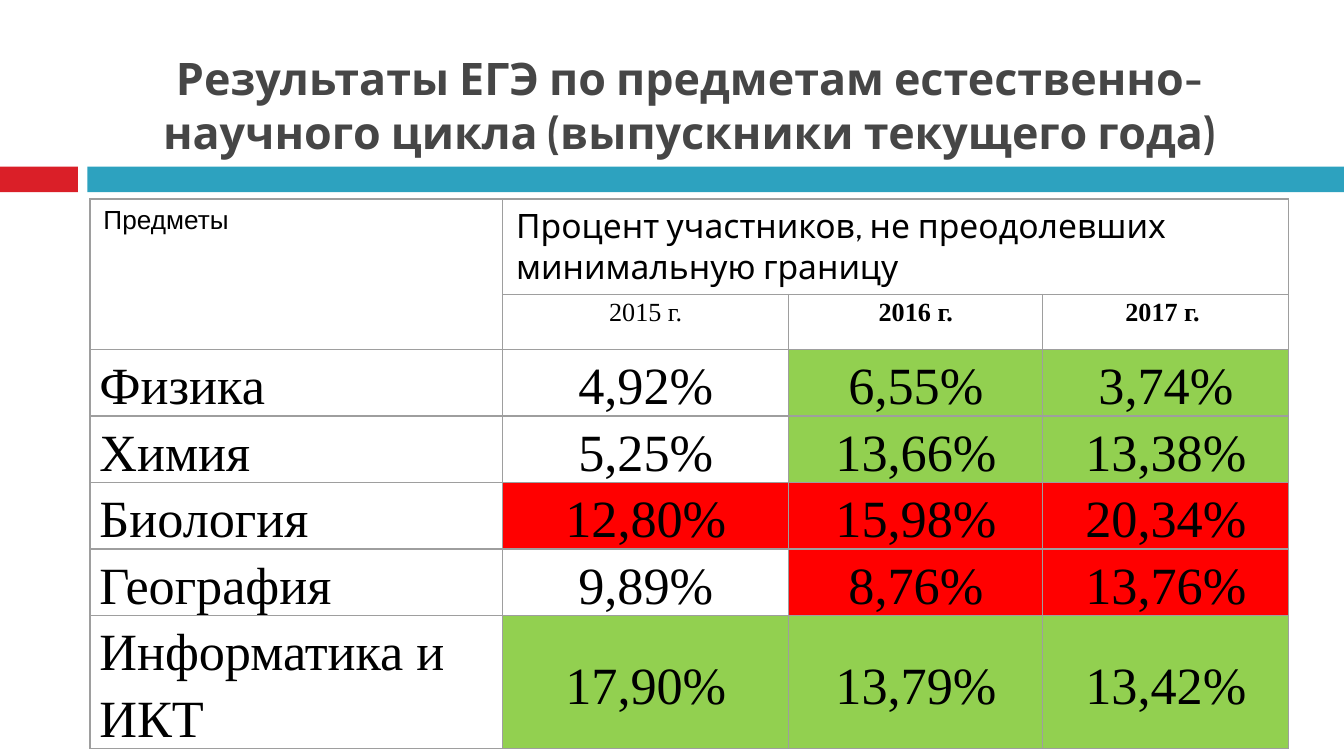
from lxml.etree import SubElement
from pptx import Presentation
from pptx.dml.color import RGBColor
from pptx.enum.shapes import MSO_SHAPE
from pptx.enum.text import MSO_ANCHOR, MSO_AUTO_SIZE, PP_ALIGN
from pptx.oxml.ns import qn
from pptx.util import Inches, Pt

COLORS = {"red": "DA1F28", "teal": "2DA2BF", "title": "464646", "text": "000000",
          "grid": "9E9E9E", "good": "92D050", "bad": "FF0000"}
FORMATS = {
    "title": {"name": "Cabin", "size": Pt(24), "bold": True},
    "corner": {"name": "Arial", "size": Pt(14), "bold": False},
    "group": {"name": "Cabin", "size": Pt(18), "bold": False},
    "year": {"name": "Times New Roman", "size": Pt(14), "bold": False},
    "key year": {"name": "Times New Roman", "size": Pt(14), "bold": True},
    "body": {"name": "Times New Roman", "size": Pt(28), "bold": False},
}


def write(frame, text, style, color="text", align=PP_ALIGN.LEFT, spacing=None):
    para = frame.paragraphs[0]
    para.alignment = align
    para.line_spacing = spacing
    run = para.add_run()
    run.text = text
    for name, value in FORMATS[style].items():
        setattr(run.font, name, value)
    run.font.color.rgb = RGBColor.from_string(COLORS[color])


def add_grid(cell):
    """Draw a thin line on all four sides of a cell."""
    props = cell._tc.get_or_add_tcPr()
    for side in ("lnL", "lnR", "lnT", "lnB"):
        line = SubElement(props, qn(f"a:{side}"), w=str(Pt(0.75)))
        fill = SubElement(line, qn("a:solidFill"))
        SubElement(fill, qn("a:srgbClr"), val=COLORS["grid"])


prs = Presentation()
prs.slide_width = Inches(10)
prs.slide_height = Inches(10) * 9 // 16
slide = prs.slides.add_slide(prs.slide_layouts[5])

# Colour bands
for left, width, color in ((0, 0.58, "red"), (0.65, 9.35, "teal")):
    band = slide.shapes.add_shape(
        MSO_SHAPE.RECTANGLE, Inches(left), Inches(1.24), Inches(width), Inches(0.19))
    band.shadow.inherit = False
    band.fill.solid()
    band.fill.fore_color.rgb = RGBColor.from_string(COLORS[color])
    band.line.fill.background()

# Title
title = slide.shapes.title
title.left, title.top = Inches(0.67), Inches(0.13)
title.width, title.height = Inches(8.92), Inches(1.1)
frame = title.text_frame
frame.word_wrap = True
frame.auto_size = MSO_AUTO_SIZE.NONE
frame.vertical_anchor = MSO_ANCHOR.BOTTOM
write(frame, "Результаты ЕГЭ по предметам естественно-научного цикла "
      "(выпускники текущего года)", "title", "title", PP_ALIGN.CENTER)

# Results table: each row has a subject, its values and their fills
YEARS = (("2015 г.", "year"), ("2016 г.", "key year"), ("2017 г. ", "key year"))
RESULTS = (
    ("Физика", ("4,92%", "6,55%", "3,74%"), (None, "good", "good")),
    ("Химия", ("5,25%", "13,66%", "13,38%"), (None, "good", "good")),
    ("Биология", ("12,80%", "15,98%", "20,34%"), ("bad", "bad", "bad")),
    ("География", ("9,89%", "8,76%", "13,76%"), (None, "bad", "bad")),
    ("Информатика и ИКТ", ("17,90%", "13,79%", "13,42%"), ("good", "good", "good")),
)
WIDTHS = (3.07, 2.13, 1.89, 1.83)
ROWS = len(RESULTS) + 2
table = slide.shapes.add_table(
    ROWS, len(WIDTHS), Inches(0.67), Inches(1.48),
    Inches(sum(WIDTHS)), Inches(0.41 * ROWS)).table
table.first_row = table.horz_banding = False
for column, width in zip(table.columns, WIDTHS):
    column.width = Inches(width)
for cell in table.iter_cells():
    add_grid(cell)
    cell.fill.background()

table.cell(0, 0).merge(table.cell(1, 0))
table.cell(0, 1).merge(table.cell(0, 3))
write(table.cell(0, 0).text_frame, "Предметы", "corner")
write(table.cell(0, 1).text_frame,
      "Процент участников, не преодолевших минимальную границу", "group")

for col, (year, style) in enumerate(YEARS, 1):
    cell = table.cell(1, col)
    cell.margin_left = cell.margin_right = Inches(0.07)
    cell.margin_top = cell.margin_bottom = 0
    write(cell.text_frame, year, style, align=PP_ALIGN.CENTER, spacing=1.15)

for row, (subject, values, fills) in enumerate(RESULTS, 2):
    for col, (text, color) in enumerate(zip((subject, *values), (None, *fills))):
        cell = table.cell(row, col)
        cell.margin_left = cell.margin_right = Inches(0.07)
        cell.margin_top = cell.margin_bottom = 0
        cell.vertical_anchor = MSO_ANCHOR.MIDDLE
        align = PP_ALIGN.CENTER if col else PP_ALIGN.LEFT
        write(cell.text_frame, text, "body", align=align, spacing=1.15)
        if color:
            cell.fill.solid()
            cell.fill.fore_color.rgb = RGBColor.from_string(COLORS[color])

prs.save("out.pptx")
